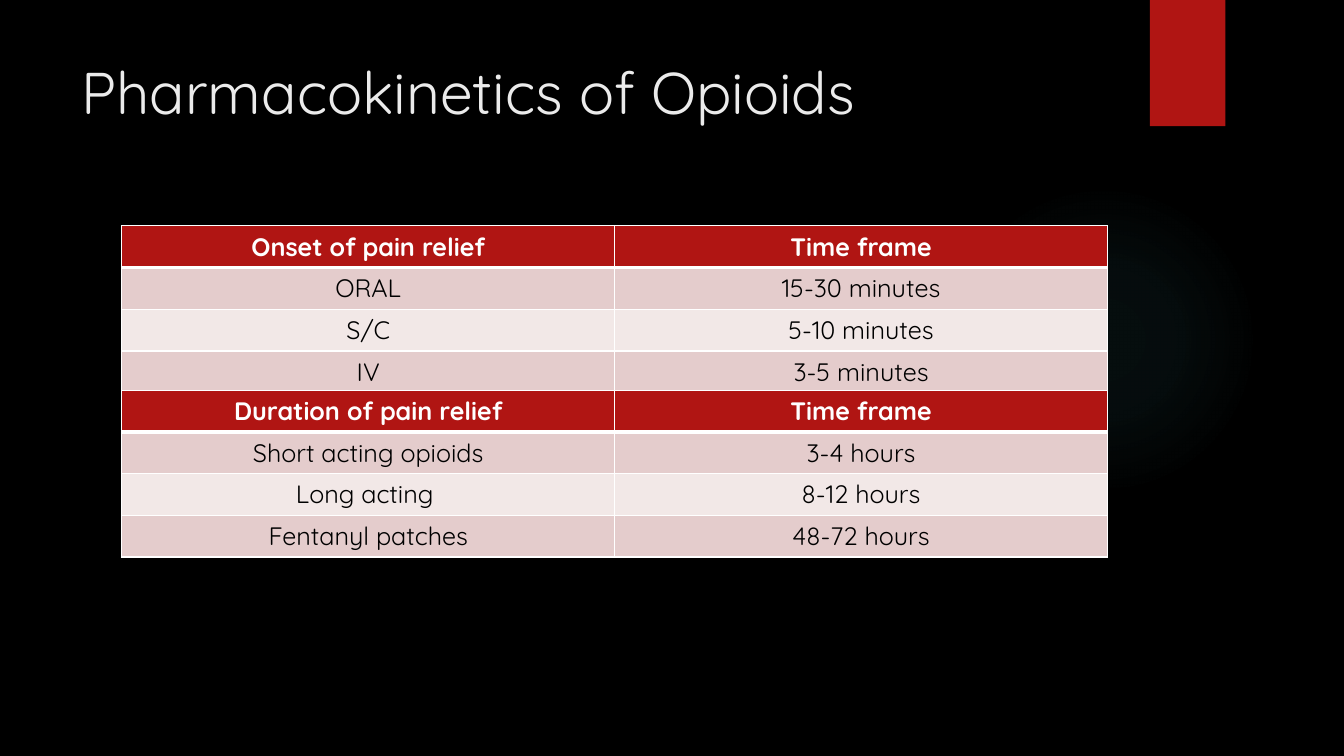
from dataclasses import dataclass

from lxml.etree import _Element as Element
from pptx import Presentation
from pptx.dml.color import RGBColor
from pptx.enum.shapes import MSO_SHAPE as Preset
from pptx.enum.text import MSO_ANCHOR as Anchor, PP_ALIGN as Align
from pptx.oxml import parse_xml
from pptx.oxml.ns import nsdecls
from pptx.shapes.autoshape import Shape
from pptx.slide import Slide
from pptx.table import _Cell as Cell
from pptx.text.text import _Paragraph as Paragraph
from pptx.util import Cm, Pt

FONT = "Quicksand"
BLACK, WHITE, RED = "000000", "FFFFFF", "B01513"
TITLE_COLOUR, GLOW_COLOUR = "EBEBEB", "50B9C1"
BANDS = ("E4CCCC", "F2E8E7")
TABLE_LEFT, COLUMN_WIDTH, ROW_HEIGHT = 3.07, 12.42, 1.03
THIN, THICK = 1, 3


@dataclass(frozen=True)
class TimeTable:
    top: float
    rows: tuple[tuple[str, str], ...]


TABLES = (
    TimeTable(5.69, (
        ("Onset of pain relief", "Time frame"),
        ("ORAL", "15-30 minutes"),
        ("S/C", "5-10 minutes"),
        ("IV", "3-5 minutes"),
    )),
    TimeTable(9.83, (
        ("Duration of pain relief", "Time frame"),
        ("Short acting opioids", "3-4 hours"),
        ("Long acting ", "8-12 hours"),
        ("Fentanyl patches", "48-72 hours"),
    )),
)


def colour(value: str) -> RGBColor:
    return RGBColor.from_string(value)


def format_text(paragraph: Paragraph, size: float, text_colour: str,
                bold: bool = False) -> None:
    formats = {"name": FONT, "size": Pt(size), "bold": bold}
    for name, value in formats.items():
        setattr(paragraph.font, name, value)
    paragraph.font.color.rgb = colour(text_colour)


def add_plain_shape(slide: Slide, preset: Preset, left: float, top: float,
                    width: float, height: float) -> Shape:
    shape = slide.shapes.add_shape(preset, Cm(left), Cm(top), Cm(width), Cm(height))
    shape.shadow.inherit = False
    shape.line.fill.background()
    return shape


def glow_fill() -> Element:
    """Radial gradient that fades out from the centre."""
    stops = "".join(
        f'<a:gs pos="{position * 1000}"><a:srgbClr val="{GLOW_COLOUR}">'
        f'<a:alpha val="{alpha * 1000}"/></a:srgbClr></a:gs>'
        for position, alpha in ((0, 7), (36, 6), (69, 0))
    )
    return parse_xml(
        f'<a:gradFill {nsdecls("a")}><a:gsLst>{stops}</a:gsLst><a:path path="circle">'
        '<a:fillToRect l="50000" t="50000" r="50000" b="50000"/></a:path></a:gradFill>'
    )


def add_decoration(slide: Slide) -> None:
    glow = add_plain_shape(slide, Preset.OVAL, 23.9, 4.65, 7.82, 7.82)
    glow.fill.background()
    no_fill = glow.fill._xPr.find("{*}noFill")
    no_fill.getparent().replace(no_fill, glow_fill())
    tab = add_plain_shape(slide, Preset.RECTANGLE, 28.98, 0, 1.9, 3.18)
    tab.fill.solid()
    tab.fill.fore_color.rgb = colour(RED)


def set_borders(cell: Cell, top: float, bottom: float) -> None:
    properties = cell._tc.get_or_add_tcPr()
    widths = {"lnL": THIN, "lnR": THIN, "lnT": top, "lnB": bottom}
    for index, (tag, width) in enumerate(widths.items()):
        properties.insert(index, parse_xml(
            f'<a:{tag} {nsdecls("a")} w="{Pt(width)}"><a:solidFill>'
            f'<a:srgbClr val="{WHITE}"/></a:solidFill></a:{tag}>'
        ))


def add_time_table(slide: Slide, content: TimeTable) -> None:
    row_count, column_count = len(content.rows), len(content.rows[0])
    table = slide.shapes.add_table(
        row_count, column_count, Cm(TABLE_LEFT), Cm(content.top),
        Cm(COLUMN_WIDTH * column_count), Cm(ROW_HEIGHT * row_count),
    ).table
    for row_index, texts in enumerate(content.rows):
        header = row_index == 0
        for column_index, text in enumerate(texts):
            cell = table.cell(row_index, column_index)
            cell.text = text
            cell.fill.solid()
            cell.fill.fore_color.rgb = colour(RED if header else BANDS[(row_index - 1) % 2])
            paragraph = cell.text_frame.paragraphs[0]
            paragraph.alignment = Align.CENTER
            format_text(paragraph, 18, WHITE if header else BLACK, header)
            set_borders(cell, THICK if row_index == 1 else THIN, THICK if header else THIN)


def set_title(slide: Slide, text: str) -> None:
    title = slide.shapes.title
    place = {"left": Cm(1.8), "top": Cm(1.27), "width": Cm(26.14), "height": Cm(3.89)}
    for name, value in place.items():
        setattr(title, name, value)
    frame = title.text_frame
    frame.text = text
    frame.vertical_anchor = Anchor.TOP
    frame.paragraphs[0].alignment = Align.LEFT
    format_text(frame.paragraphs[0], 42, TITLE_COLOUR)


def main() -> None:
    presentation = Presentation()
    presentation.slide_width, presentation.slide_height = Cm(33.87), Cm(19.05)
    slide = presentation.slides.add_slide(presentation.slide_layouts[5])
    slide.background.fill.solid()
    slide.background.fill.fore_color.rgb = colour(BLACK)
    set_title(slide, "Pharmacokinetics of Opioids")
    add_decoration(slide)
    for content in TABLES:
        add_time_table(slide, content)
    presentation.save("out.pptx")


if __name__ == "__main__":
    main()
